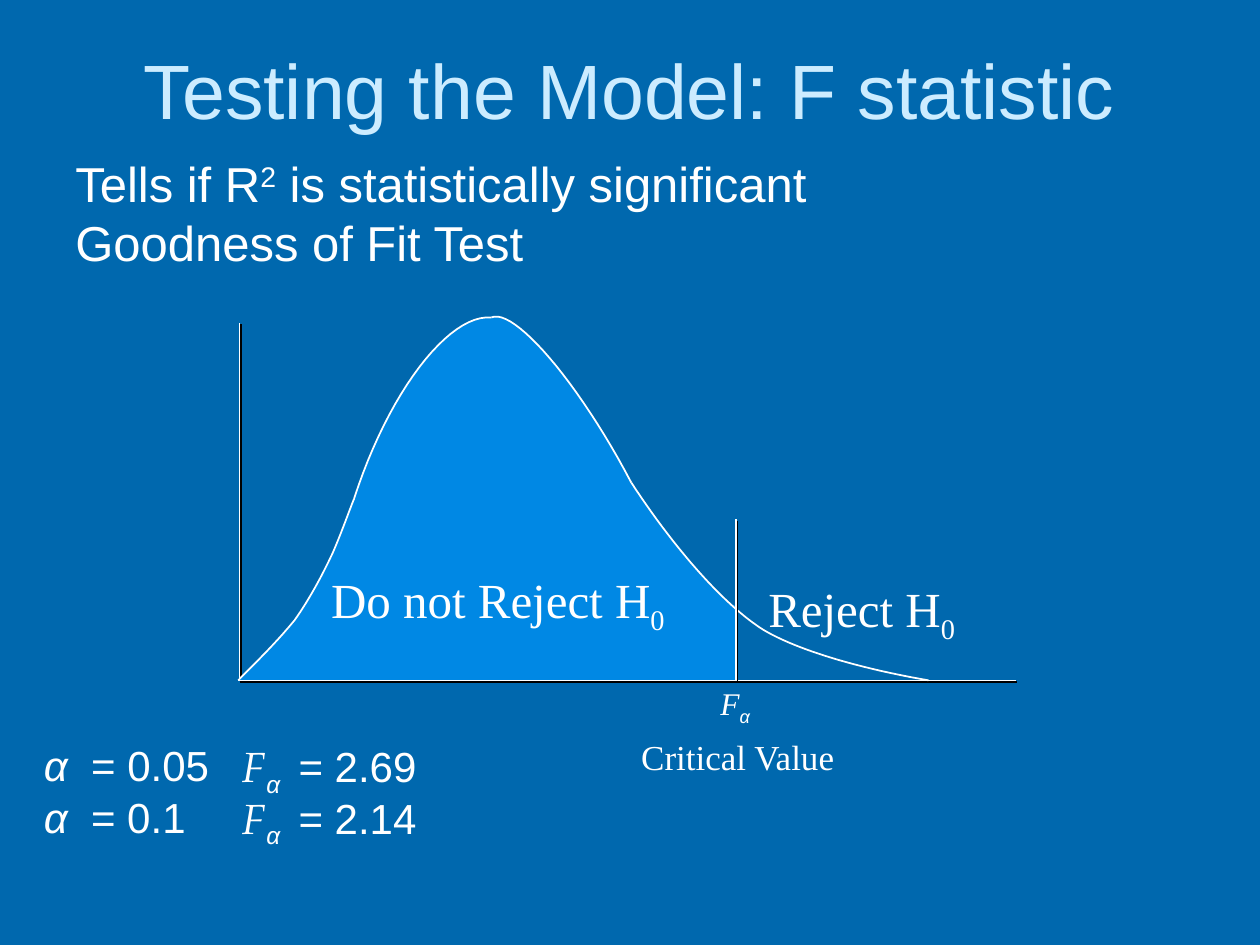
from lxml.etree import SubElement
from pptx import Presentation
from pptx.dml.color import RGBColor
from pptx.enum.shapes import MSO_CONNECTOR
from pptx.enum.text import MSO_ANCHOR, PP_ALIGN
from pptx.oxml.ns import qn
from pptx.util import Inches, Pt

BACKGROUND = RGBColor(0x00, 0x68, 0xAE)
TITLE_COLOR = RGBColor(0xCC, 0xEC, 0xFF)
REGION_COLOR = RGBColor(0x00, 0x88, 0xE4)
WHITE = RGBColor(0xFF, 0xFF, 0xFF)

SANS = "Arial"
SERIF = "Times New Roman"
FORMULA = "TeX Gyre Pagella"
SUBSCRIPT = -25
SUPERSCRIPT = 30

BASE_Y = 5.4
FOOT_X = 2.58
CRITICAL_X = 5.84

RISE = [
    [(1.89, 5.4), (2.05, 5.24), (2.21, 5.08), (2.34, 4.92)],
    [(2.34, 4.92), (2.46, 4.75), (2.56, 4.56), (2.64, 4.39)],
    [(2.64, 4.39), (2.71, 4.23), (2.78, 4.03), (2.81, 3.96)],
]
LEFT_SHOULDER = [[(2.81, 3.96), (3.08, 3.12), (3.56, 2.49), (3.9, 2.52)]]
RIGHT_SHOULDER = [[(3.9, 2.52), (4.08, 2.44), (4.59, 3.03), (5.01, 3.83)]]
DESCENT = [[(5.01, 3.83), (5.33, 4.32), (5.7, 4.75), (6, 4.96)]]
TAIL = [[(6, 4.96), (6.22, 5.12), (6.73, 5.29), (7.37, 5.4)]]
ARCS = [DESCENT, TAIL, LEFT_SHOULDER, RIGHT_SHOULDER, RISE]


def bezier_point(controls, t):
    weights = [(1 - t) ** 3, 3 * t * (1 - t) ** 2, 3 * t**2 * (1 - t), t**3]
    return tuple(
        sum(weight * point[axis] for weight, point in zip(weights, controls))
        for axis in (0, 1)
    )


def sample(segments, steps=24):
    return [
        bezier_point(controls, step / steps)
        for controls in segments
        for step in range(steps + 1)
    ]


def add_outline(slide, points, close):
    scaled = [(Inches(x), Inches(y)) for x, y in points]
    builder = slide.shapes.build_freeform(*scaled[0], scale=1.0)
    builder.add_line_segments(scaled[1:], close=close)
    shape = builder.convert_to_shape()
    shape.shadow.inherit = False
    return shape


def add_region(slide, curve, left, right):
    top = [point for point in curve if left <= point[0] <= right]
    points = [(left, BASE_Y), (left, top[0][1]), *top, (right, top[-1][1]), (right, BASE_Y)]
    shape = add_outline(slide, points, True)
    shape.fill.solid()
    shape.fill.fore_color.rgb = REGION_COLOR
    shape.line.fill.background()


def add_arc(slide, segments):
    shape = add_outline(slide, sample(segments), False)
    shape.fill.background()
    shape.line.color.rgb = WHITE
    shape.line.width = Pt(1)


def add_shadowed_line(slide, start, end):
    line = slide.shapes.add_connector(
        MSO_CONNECTOR.STRAIGHT, *(Inches(value) for value in (*start, *end))
    )
    line.line.color.rgb = WHITE
    line.line.width = Pt(1)
    effects = SubElement(line._element.spPr, qn("a:effectLst"))
    shadow = SubElement(
        effects, qn("a:outerShdw"), dist=str(Pt(1.4)), dir="2700000", algn="ctr", rotWithShape="0"
    )
    SubElement(shadow, qn("a:srgbClr"), val="000000")


def add_run(paragraph, text, size, font, color=WHITE, italic=False, baseline=0):
    run = paragraph.add_run()
    run.text = text
    run.font.size = Pt(size)
    run.font.name = font
    run.font.color.rgb = color
    run.font.italic = italic
    if baseline:
        run._r.get_or_add_rPr().set("baseline", str(baseline * 1000))


def add_text_frame(slide, left, top, width, height, wrap=True):
    box = slide.shapes.add_textbox(Inches(left), Inches(top), Inches(width), Inches(height))
    box.text_frame.word_wrap = wrap
    return box.text_frame


def add_title(slide):
    frame = add_text_frame(slide, 0.5, 0.08, 9, 1.25)
    frame.vertical_anchor = MSO_ANCHOR.MIDDLE
    paragraph = frame.paragraphs[0]
    paragraph.alignment = PP_ALIGN.CENTER
    add_run(paragraph, "Testing the Model: F statistic", 44, SANS, TITLE_COLOR)


def add_introduction(slide):
    frame = add_text_frame(slide, 0.5, 1.17, 6.99, 1.04)
    first = frame.paragraphs[0]
    add_run(first, "Tells if R", 28, SANS)
    add_run(first, "2", 28, SANS, baseline=SUPERSCRIPT)
    add_run(first, " is statistically significant", 28, SANS)
    add_run(frame.add_paragraph(), "Goodness of Fit Test", 28, SANS)


def add_label(slide, left, top, width, text, size, subscript=""):
    paragraph = add_text_frame(slide, left, top, width, 0.61).paragraphs[0]
    paragraph.space_before = Pt(3)
    add_run(paragraph, text, size, SERIF)
    if subscript:
        add_run(paragraph, subscript, size, SERIF, baseline=SUBSCRIPT)


def add_critical_symbol(paragraph, size, font, subscript):
    add_run(paragraph, "F", size, font, italic=True)
    add_run(paragraph, subscript, size, SANS, italic=True, baseline=SUBSCRIPT)


def add_critical_value(slide, top, value):
    paragraph = add_text_frame(slide, 1.83, top, 1.64, 0.5, wrap=False).paragraphs[0]
    add_critical_symbol(paragraph, 24, FORMULA, "α ")
    add_run(paragraph, f" = {value}", 24, SANS)


def add_significance_level(slide, top, width, value):
    paragraph = add_text_frame(slide, 0.25, top, width, 0.5, wrap=False).paragraphs[0]
    add_run(paragraph, "α ", 24, SANS, italic=True)
    add_run(paragraph, f" = {value}", 24, SANS)


def add_distribution(slide):
    curve = sample(RISE + LEFT_SHOULDER + RIGHT_SHOULDER + DESCENT)
    add_shadowed_line(slide, (1.9, BASE_Y), (1.9, 2.56))
    add_region(slide, curve, FOOT_X, CRITICAL_X)
    add_region(slide, curve, 1.9, FOOT_X)
    add_shadowed_line(slide, (1.89, BASE_Y), (8.06, BASE_Y))
    for segments in ARCS:
        add_arc(slide, segments)
    add_shadowed_line(slide, (CRITICAL_X, 4.12), (CRITICAL_X, BASE_Y))


def main():
    presentation = Presentation()
    presentation.slide_width = Inches(10)
    presentation.slide_height = Inches(7.5)
    slide = presentation.slides.add_slide(presentation.slide_layouts[6])
    slide.background.fill.solid()
    slide.background.fill.fore_color.rgb = BACKGROUND

    add_title(slide)
    add_distribution(slide)
    for row, (level, width, value) in enumerate([("0.05", 1.52, "2.69"), ("0.1", 1.36, "2.14")]):
        top = 5.82 + 0.41 * row
        add_critical_value(slide, top + 0.01, value)
        add_significance_level(slide, top, width, level)
    add_label(slide, 2.53, 4.47, 2.97, "Do not Reject H", 28, "0")
    add_label(slide, 6, 4.54, 2.97, "Reject H", 28, "0")
    symbol = add_text_frame(slide, 5.62, 5.38, 0.44, 0.4, wrap=False).paragraphs[0]
    add_critical_symbol(symbol, 18, SERIF, "α")
    add_label(slide, 4.99, 5.79, 2.09, "Critical Value", 20)
    add_introduction(slide)
    presentation.save("out.pptx")


if __name__ == "__main__":
    main()
